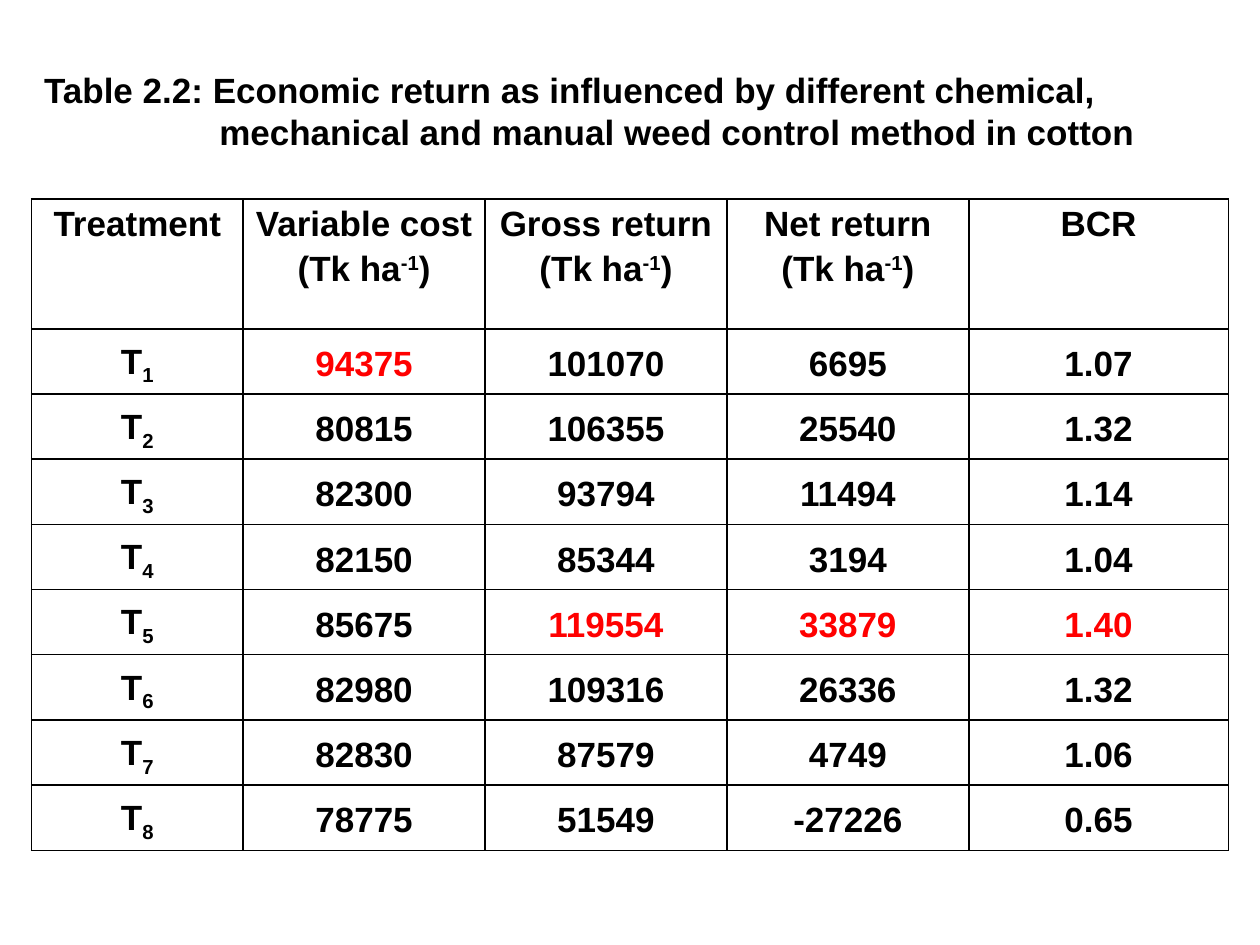
from lxml.etree import SubElement
from pptx import Presentation
from pptx.dml.color import RGBColor
from pptx.enum.text import MSO_ANCHOR as Anchor, MSO_AUTO_SIZE as AutoSize, PP_ALIGN as Align
from pptx.oxml.ns import qn
from pptx.util import Inches, Pt

BLACK = RGBColor(0x00, 0x00, 0x00)
RED = RGBColor(0xFF, 0x00, 0x00)
FONT_NAME = "Arial"
FONT_SIZE = Pt(20)
SUPERSCRIPT, SUBSCRIPT = 30, -25

TITLE_LINES = [
    "Table 2.2: Economic return as influenced by different chemical,",
    "mechanical and manual weed control method in cotton",
]
UNIT = [("(Tk ha", 0), ("-1", SUPERSCRIPT), (")", 0)]
HEADERS = [
    [[("Treatment", 0)]],
    [[("Variable cost", 0)], UNIT],
    [[("Gross return", 0)], UNIT],
    [[("Net return", 0)], UNIT],
    [[("BCR", 0)]],
]
RESULTS = [
    ("94375", "101070", "6695", "1.07"),
    ("80815", "106355", "25540", "1.32"),
    ("82300", "93794", "11494", "1.14"),
    ("82150", "85344", "3194", "1.04"),
    ("85675", "119554", "33879", "1.40"),
    ("82980", "109316", "26336", "1.32"),
    ("82830", "87579", "4749", "1.06"),
    ("78775", "51549", "-27226", "0.65"),
]
HIGHLIGHTS = {(1, 1), (5, 2), (5, 3), (5, 4)}
COLUMN_WIDTHS = [1.68, 1.92, 1.92, 1.92, 2.06]
HEADER_HEIGHT = 1.03


def style_font(paragraph, color=BLACK):
    font = paragraph.font
    font.name, font.size, font.bold = FONT_NAME, FONT_SIZE, True
    font.color.rgb = color


def add_title(slide, left, top, width, height):
    title = slide.shapes.title
    title.left, title.top = Inches(left), Inches(top)
    title.width, title.height = Inches(width), Inches(height)
    frame = title.text_frame
    frame.auto_size = AutoSize.NONE
    frame.vertical_anchor = Anchor.MIDDLE
    frame.text = "\n".join(TITLE_LINES)
    for paragraph in frame.paragraphs:
        paragraph.alignment = Align.LEFT
        style_font(paragraph)
    properties = frame.paragraphs[1]._p.get_or_add_pPr()
    properties.set("marL", str(Inches(1.39)))
    properties.set("indent", "0")


def set_borders(cell):
    properties = cell._tc.get_or_add_tcPr()
    for position, side in enumerate(("lnL", "lnR", "lnT", "lnB")):
        line = SubElement(properties, qn(f"a:{side}"), w=str(Pt(1)))
        fill = SubElement(line, qn("a:solidFill"))
        SubElement(fill, qn("a:srgbClr"), val=str(BLACK))
        properties.insert(position, line)


def fill_cell(cell, lines, anchor, color=BLACK):
    cell.fill.background()
    set_borders(cell)
    cell.vertical_anchor = anchor
    cell.margin_left = cell.margin_right = Inches(0.07)
    cell.margin_top = cell.margin_bottom = 0
    frame = cell.text_frame
    for index, parts in enumerate(lines):
        paragraph = frame.add_paragraph() if index else frame.paragraphs[0]
        paragraph.alignment = Align.CENTER
        paragraph.line_spacing = 1.15
        style_font(paragraph, color)
        for text, baseline in parts:
            run = paragraph.add_run()
            run.text = text
            if baseline:
                run._r.get_or_add_rPr().set("baseline", str(baseline * 1000))


def add_results_table(slide, left, top, width, height):
    row_count = len(RESULTS) + 1
    table = slide.shapes.add_table(
        row_count, len(HEADERS), Inches(left), Inches(top), Inches(width), Inches(height)
    ).table
    table.first_row = table.horz_banding = False
    for column, column_width in zip(table.columns, COLUMN_WIDTHS):
        column.width = Inches(column_width)
    row_height = (height - HEADER_HEIGHT) / len(RESULTS)
    for index, row in enumerate(table.rows):
        row.height = Inches(row_height if index else HEADER_HEIGHT)

    for column, lines in enumerate(HEADERS):
        fill_cell(table.cell(0, column), lines, Anchor.TOP)
    for row, values in enumerate(RESULTS, start=1):
        treatment = [("T", 0), (str(row), SUBSCRIPT)]
        fill_cell(table.cell(row, 0), [treatment], Anchor.MIDDLE)
        for column, value in enumerate(values, start=1):
            color = RED if (row, column) in HIGHLIGHTS else BLACK
            fill_cell(table.cell(row, column), [[(value, 0)]], Anchor.MIDDLE, color)


def main():
    presentation = Presentation()
    presentation.slide_width, presentation.slide_height = Inches(10), Inches(7.5)
    slide = presentation.slides.add_slide(presentation.slide_layouts[5])
    add_title(slide, 0.25, 0.42, 9.5, 0.92)
    add_results_table(slide, 0.25, 1.58, 9.5, 5.17)
    presentation.save("out.pptx")


if __name__ == "__main__":
    main()
